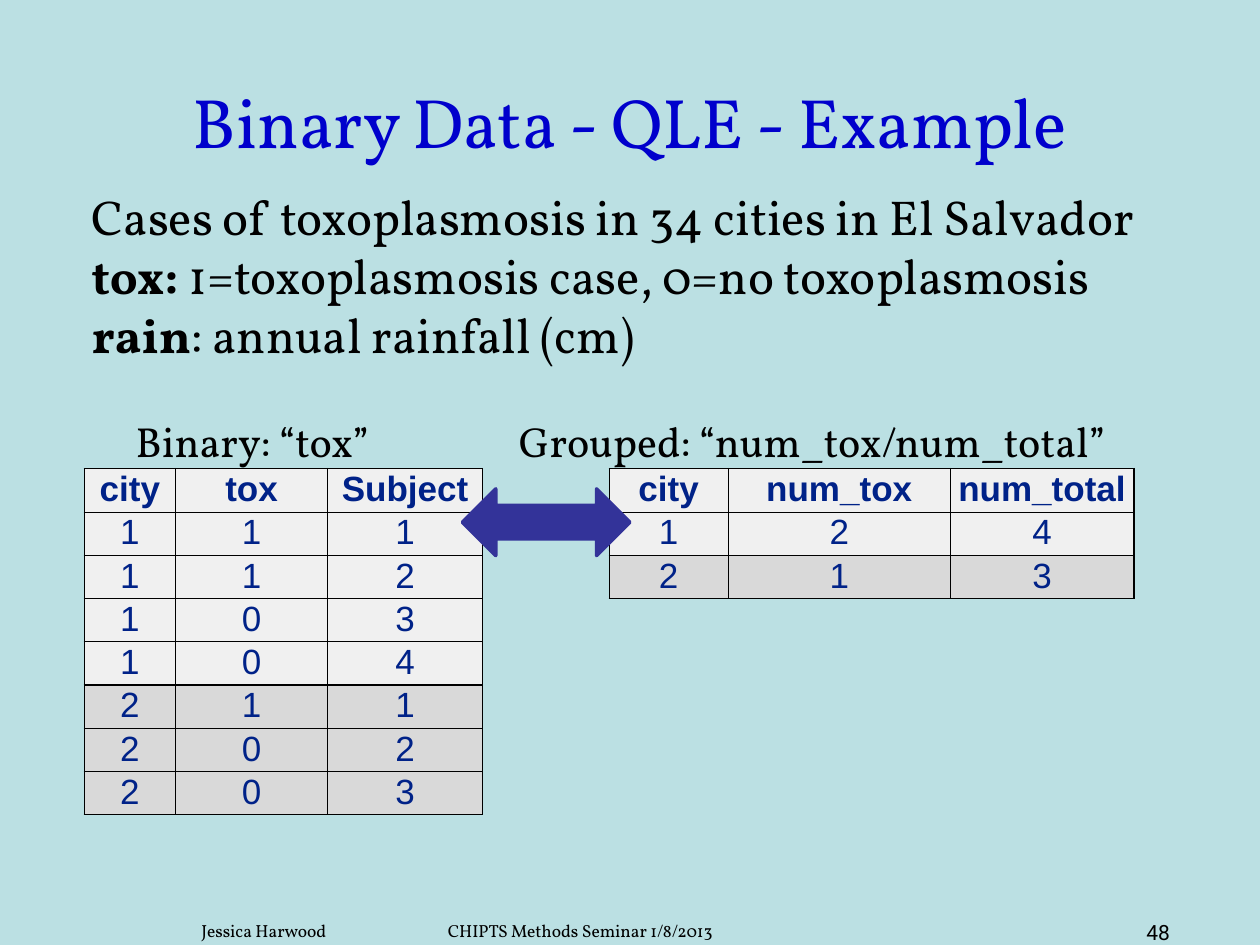
import pptx
import pptx.dml.color
import pptx.enum.shapes
import pptx.enum.text
import pptx.oxml
import pptx.oxml.ns
import pptx.util

Pt = pptx.util.Pt
ALIGN = pptx.enum.text.PP_ALIGN
ANCHOR = pptx.enum.text.MSO_ANCHOR
SERIF = "Vollkorn"
BLACK, NAVY, INDIGO = "000000", "002288", "333399"
LIGHT, GREY = "F0F0F0", "D9D9D9"


def color(value):
    return pptx.dml.color.RGBColor.from_string(value)


def write(p, text, size=28, font=SERIF, fill=BLACK, bold=False, align=ALIGN.LEFT):
    p.alignment = align
    r = p.add_run()
    r.text = text
    r.font.size = Pt(size)
    r.font.name = font
    r.font.bold = bold
    r.font.color.rgb = color(fill)


def add_text(s, box, lines, anchor=ANCHOR.TOP, **fmt):
    """Each line is a list of (text, bold) runs."""
    tf = s.shapes.add_textbox(*map(Pt, box)).text_frame
    tf.word_wrap = True
    tf.vertical_anchor = anchor
    for i, line in enumerate(lines):
        p = tf.add_paragraph() if i else tf.paragraphs[0]
        for text, bold in line:
            write(p, text, bold=bold, **fmt)


def set_borders(cell, widths):
    tc_pr = cell._tc.get_or_add_tcPr()
    for i, side in enumerate("LRTB"):
        ln = pptx.oxml.parse_xml(
            f'<a:ln{side} {pptx.oxml.ns.nsdecls("a")} w="{Pt(widths[side])}">'
            f'<a:solidFill><a:srgbClr val="{BLACK}"/></a:solidFill></a:ln{side}>')
        tc_pr.insert(i, ln)


def add_data_table(s, left, top, col_widths, rows, thick="", thick_after=None):
    """Shades rows by city; thick lists the outer sides with a 1 pt line,
    thick_after the row that has such a line below it."""
    row_height = 23.1
    n_rows, n_cols = len(rows), len(col_widths)
    table = s.shapes.add_table(n_rows, n_cols, Pt(left), Pt(top),
                               Pt(sum(col_widths)), Pt(row_height * n_rows)).table
    for col, width in zip(table.columns, col_widths):
        col.width = Pt(width)
    for i, values in enumerate(rows):
        table.rows[i].height = Pt(row_height)
        for j, value in enumerate(values):
            cell = table.cell(i, j)
            cell.margin_left = cell.margin_right = cell.margin_top = Pt(0.7)
            cell.margin_bottom = Pt(0)
            cell.fill.solid()
            cell.fill.fore_color.rgb = color(GREY if values[0] == "2" else LIGHT)
            write(cell.text_frame.paragraphs[0], value, size=20, font="Arial",
                  fill=NAVY, bold=i == 0, align=ALIGN.CENTER)
            on_edge = {"L": j == 0, "R": j == n_cols - 1,
                       "T": i == 0, "B": i == n_rows - 1}
            widths = {side: 1 if edge and side in thick else 0.5
                      for side, edge in on_edge.items()}
            if thick_after is not None:
                if i == thick_after:
                    widths["B"] = 1
                elif i == thick_after + 1:
                    widths["T"] = 1
            set_borders(cell, widths)


def add_header(s):
    # Title
    add_text(s, (36, 23.76, 648, 90), [[("Binary Data - QLE - Example", False)]],
             anchor=ANCHOR.MIDDLE, size=40, fill="0000CC", align=ALIGN.CENTER)
    # Description of the variables
    add_text(s, (45.36, 103, 624.24, 108.72), [
        [("Cases of toxoplasmosis in 34 cities in El Salvador", False)],
        [("tox: ", True), ("1=toxoplasmosis case, 0=no toxoplasmosis", False)],
        [("rain", True), (": annual rainfall (cm)", False)],
    ])


def add_comparison(s, top):
    # Captions
    for left, width, text in ((70.5, 200, "Binary: “tox”"),
                              (289.4, 400, "Grouped: “num_tox/num_total”")):
        add_text(s, (left, top, width, 27.36), [[(text, False)]], size=24)
    # Binary and grouped data
    binary = ["city tox Subject", "1 1 1", "1 1 2", "1 0 3", "1 0 4",
              "2 1 1", "2 0 2", "2 0 3"]
    grouped = ["city num_tox num_total", "1 2 4", "2 1 3"]
    table_top = top + 33.84
    add_data_table(s, 48.24, table_top, (52, 87, 88.5),
                   [row.split() for row in binary], thick="LTR", thick_after=4)
    add_data_table(s, 348, table_top, (68.2, 126.8, 105),
                   [row.split() for row in grouped], thick="TRB")
    # Arrow between the tables
    sp = s.shapes.add_shape(pptx.enum.shapes.MSO_SHAPE.LEFT_RIGHT_ARROW,
                            Pt(264.24), Pt(top + 45.36), Pt(95.76), Pt(38.16))
    sp.shadow.inherit = False
    sp.fill.solid()
    sp.fill.fore_color.rgb = color(INDIGO)
    sp.line.color.rgb = color(INDIGO)
    sp.line.width = Pt(2)


def add_footer(s, top):
    for left, width, text, size, font in (
            (108, 130, "Jessica Harwood", 10, SERIF),
            (248.8, 250, "CHIPTS Methods Seminar 1/8/2013", 10, SERIF),
            (648, 48, "48", 12, "Roboto")):
        add_text(s, (left, top, width, 18), [[(text, False)]], size=size, font=font)


def main():
    prs = pptx.Presentation()
    prs.slide_width, prs.slide_height = Pt(720), Pt(540)
    s = prs.slides.add_slide(prs.slide_layouts[6])
    s.background.fill.solid()
    s.background.fill.fore_color.rgb = color("BBE0E3")
    add_header(s)
    add_comparison(s, 234)
    add_footer(s, 522)
    prs.save("out.pptx")


if __name__ == "__main__":
    main()
